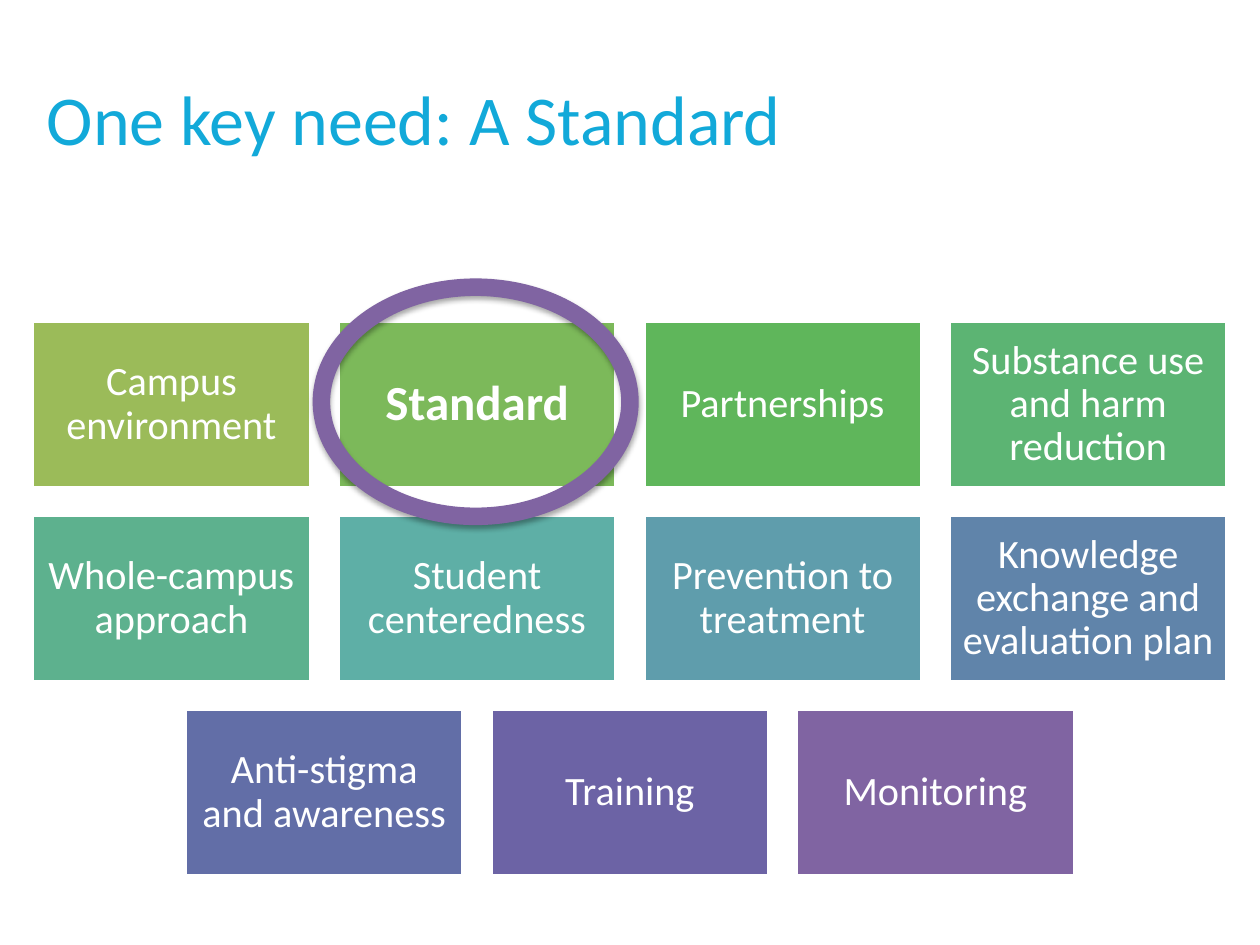
from lxml.etree import SubElement
from pptx import Presentation
from pptx.dml.color import RGBColor
from pptx.enum.shapes import MSO_SHAPE
from pptx.enum.text import MSO_ANCHOR, PP_ALIGN
from pptx.oxml.ns import qn
from pptx.util import Cm, Pt

TITLE = "One key need: A Standard"
HIGHLIGHTED = "Standard"
ROWS = [
    [("Campus environment", "9BBB59"), ("Standard", "7CB95A"),
     ("Partnerships", "5FB65B"), ("Substance use and harm reduction", "5CB473")],
    [("Whole-campus approach", "5DB18E"), ("Student centeredness", "5EAFA6"),
     ("Prevention to treatment", "5F9DAC"),
     ("Knowledge exchange and evaluation plan", "6084AA")],
    [("Anti-stigma and awareness", "626EA7"), ("Training", "6C63A5"),
     ("Monitoring", "8064A2")],
]

# Centimetres
SLIDE_WIDTH, SLIDE_HEIGHT = 25.4, 19.05
TILE_WIDTH, TILE_HEIGHT, GAP = 5.6, 3.35, 0.56
GRID_TOP = 6.48


def set_color(color_format, hex_color):
    color_format.rgb = RGBColor.from_string(hex_color)


def format_text(paragraph, size, color, bold=False):
    paragraph.font.name = "Calibri"
    paragraph.font.size = Pt(size)
    paragraph.font.bold = bold
    set_color(paragraph.font.color, color)


def add_outlined_shape(slide, kind, position, line_color, line_width):
    shape = slide.shapes.add_shape(kind, *(Cm(length) for length in position))
    shape.shadow.inherit = False
    set_color(shape.line.color, line_color)
    shape.line.width = Pt(line_width)
    return shape


def add_title(slide):
    title = slide.shapes.title
    title.left, title.top, title.width, title.height = Cm(0.69), Cm(1.4), Cm(17.96), Cm(3.2)
    frame = title.text_frame
    frame.text = TITLE
    frame.word_wrap = True
    frame.vertical_anchor = MSO_ANCHOR.TOP
    paragraph = frame.paragraphs[0]
    paragraph.alignment = PP_ALIGN.LEFT
    format_text(paragraph, 40, "12A9D9")


def add_tile(slide, text, color, left, top):
    tile = add_outlined_shape(slide, MSO_SHAPE.RECTANGLE,
                              (left, top, TILE_WIDTH, TILE_HEIGHT), "FFFFFF", 2)
    tile.fill.solid()
    set_color(tile.fill.fore_color, color)
    frame = tile.text_frame
    frame.text = text
    frame.word_wrap = True
    frame.vertical_anchor = MSO_ANCHOR.MIDDLE
    frame.margin_left = frame.margin_right = Cm(0.25)
    frame.margin_top = frame.margin_bottom = Cm(0.25)
    paragraph = frame.paragraphs[0]
    paragraph.alignment = PP_ALIGN.CENTER
    paragraph.line_spacing = 0.9
    highlighted = text == HIGHLIGHTED
    format_text(paragraph, 28 if highlighted else 23, "FFFFFF", highlighted)


def add_tiles(slide):
    for row_index, row in enumerate(ROWS):
        row_width = len(row) * (TILE_WIDTH + GAP) - GAP
        row_left = (SLIDE_WIDTH - row_width) / 2
        top = GRID_TOP + row_index * (TILE_HEIGHT + GAP)
        for column, (text, color) in enumerate(row):
            add_tile(slide, text, color, row_left + column * (TILE_WIDTH + GAP), top)


def add_highlight_ring(slide):
    ring = add_outlined_shape(slide, MSO_SHAPE.OVAL, (6.48, 5.79, 6.22, 4.62), "8064A2", 10)
    ring.fill.background()
    effects = ring._element.spPr.find(qn("a:effectLst"))
    shadow = SubElement(effects, qn("a:outerShdw"), blurRad=str(Pt(3.1)),
                        dist=str(Pt(1.8)), dir="5400000", rotWithShape="0")
    shadow_color = SubElement(shadow, qn("a:srgbClr"), val="000000")
    SubElement(shadow_color, qn("a:alpha"), val="35000")


def main():
    presentation = Presentation()
    presentation.slide_width = Cm(SLIDE_WIDTH)
    presentation.slide_height = Cm(SLIDE_HEIGHT)
    slide = presentation.slides.add_slide(presentation.slide_layouts[5])
    add_title(slide)
    add_tiles(slide)
    add_highlight_ring(slide)
    presentation.save("out.pptx")


if __name__ == "__main__":
    main()
